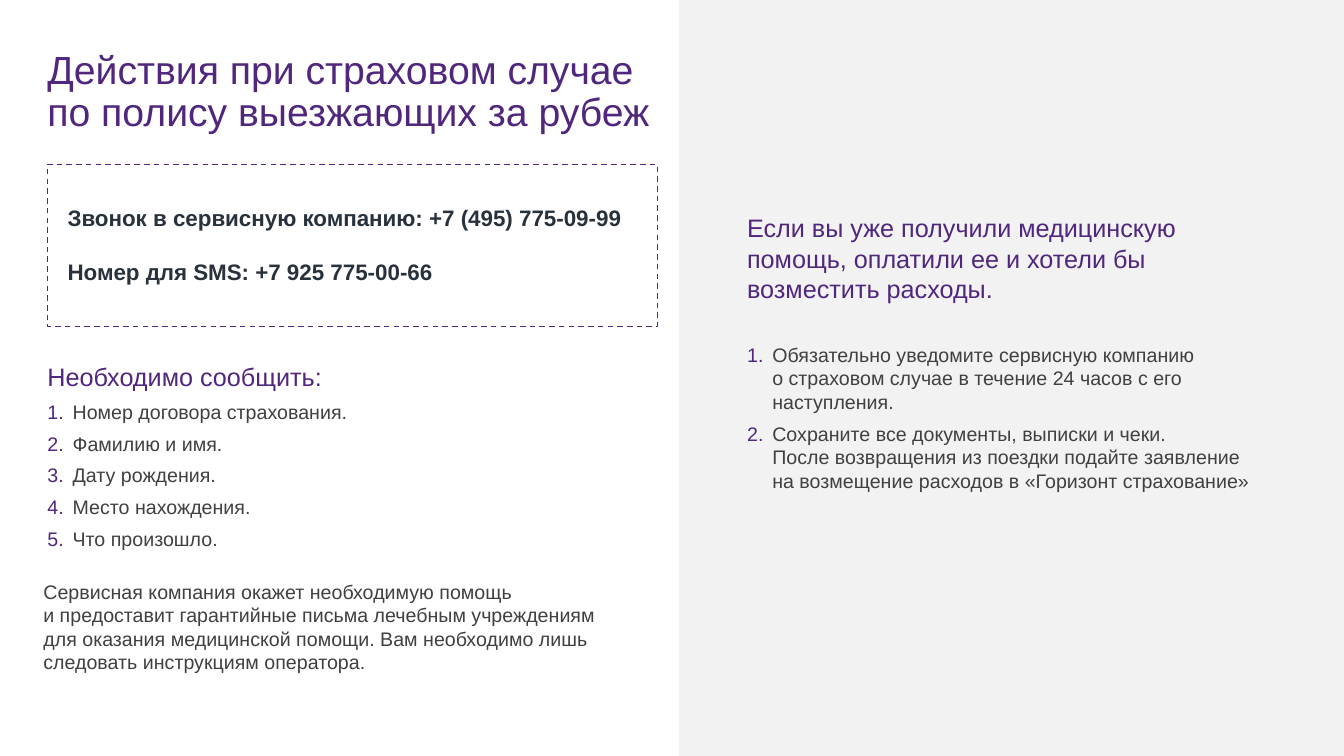
from lxml.etree import SubElement
from pptx import Presentation
from pptx.dml.color import RGBColor
from pptx.enum.dml import MSO_LINE
from pptx.enum.shapes import MSO_SHAPE
from pptx.enum.text import MSO_AUTO_SIZE
from pptx.oxml.ns import qn
from pptx.util import Inches, Pt

COLORS = {
    "purple": "50277D",
    "body": "404040",
    "dark": "28323C",
    "panel": "F2F2F2",
    "white": "FFFFFF",
}


def color(name):
    """Return a palette colour."""
    return RGBColor.from_string(COLORS[name])


def add_rectangle(slide, left, top, width, height, fill, dashed=False):
    """Add a filled rectangle, with a dashed purple border if asked."""
    shape = slide.shapes.add_shape(
        MSO_SHAPE.RECTANGLE, Inches(left), Inches(top), Inches(width), Inches(height)
    )
    shape.shadow.inherit = False
    shape.fill.solid()
    shape.fill.fore_color.rgb = color(fill)
    if dashed:
        shape.line.color.rgb = color("purple")
        shape.line.width = Pt(1)
        shape.line.dash_style = MSO_LINE.DASH
    else:
        shape.line.fill.background()


def add_text_frame(slide, left, top, width, height):
    """Add a wrapping text box without margins and return its frame."""
    box = slide.shapes.add_textbox(Inches(left), Inches(top), Inches(width), Inches(height))
    frame = box.text_frame
    frame.word_wrap = True
    frame.auto_size = MSO_AUTO_SIZE.SHAPE_TO_FIT_TEXT
    frame.margin_left = frame.margin_right = frame.margin_top = frame.margin_bottom = 0
    return frame


def style(paragraph, text, size, color_name, bold=False, after=0):
    """Fill a paragraph and set its font and space after."""
    paragraph.text = text
    paragraph.space_after = Pt(after)
    paragraph.font.name = "Arial"
    paragraph.font.size = Pt(size)
    paragraph.font.bold = bold
    paragraph.font.color.rgb = color(color_name)


def number(paragraph):
    """Give a paragraph a purple number and a hanging indent."""
    properties = paragraph._p.get_or_add_pPr()
    properties.set("marL", str(Inches(0.25)))
    properties.set("indent", str(-Inches(0.25)))
    bullet_color = SubElement(properties, qn("a:buClr"))
    SubElement(bullet_color, qn("a:srgbClr"), val=COLORS["purple"])
    SubElement(properties, qn("a:buFont"), typeface="+mj-lt")
    SubElement(properties, qn("a:buAutoNum"), type="arabicPeriod")


def add_numbered_list(slide, left, top, width, height, heading, items, heading_gap=6):
    """Add a purple heading followed by numbered items."""
    frame = add_text_frame(slide, left, top, width, height)
    style(frame.paragraphs[0], heading, 18, "purple", after=heading_gap)
    for item in items:
        paragraph = frame.add_paragraph()
        number(paragraph)
        style(paragraph, item, 14, "body", after=6)


def add_title(slide, left, top, width, height):
    """Add the slide title."""
    paragraph = add_text_frame(slide, left, top, width, height).paragraphs[0]
    paragraph.line_spacing = 0.9
    style(
        paragraph,
        "Действия при страховом случае\nпо полису выезжающих за рубеж",
        28,
        "purple",
    )


def add_contacts(slide, left, top, width, height):
    """Add the dashed frame with the phone numbers."""
    add_rectangle(slide, left, top, width, height, "white", dashed=True)
    frame = add_text_frame(slide, left + 0.2, top + 0.39, width - 0.5, height - 0.8)
    style(
        frame.paragraphs[0],
        "Звонок в сервисную компанию: +7 (495) 775-09-99",
        16,
        "dark",
        bold=True,
        after=20,
    )
    style(frame.add_paragraph(), "Номер для SMS: +7 925 775-00-66", 16, "dark", bold=True)


def add_closing_note(slide, left, top, width, height):
    """Add the note on what the service company does."""
    frame = add_text_frame(slide, left, top, width, height)
    style(
        frame.paragraphs[0],
        "Сервисная компания окажет необходимую помощь\n"
        "и предоставит гарантийные письма лечебным учреждениям "
        "для оказания медицинской помощи. Вам необходимо лишь "
        "следовать инструкциям оператора.",
        14,
        "body",
    )


def add_refund_panel(slide, left, top, width, height):
    """Add the grey panel on refunding expenses."""
    add_rectangle(slide, left, top, width, height, "panel")
    add_numbered_list(
        slide, left + 0.68, top + 2.11, width - 1.35, 2.81,
        "Если вы уже получили медицинскую помощь, оплатили ее и хотели бы возместить расходы.",
        [
            "Обязательно уведомите сервисную компанию\n"
            "о страховом случае в течение 24 часов с его наступления.",
            "Сохраните все документы, выписки и чеки.\n"
            "После возвращения из поездки подайте заявление\n"
            "на возмещение расходов в «Горизонт страхование»",
        ],
        heading_gap=28,
    )


def main():
    """Build and save the slide."""
    presentation = Presentation()
    presentation.slide_width = Inches(13.33)
    presentation.slide_height = Inches(7.5)
    slide = presentation.slides.add_slide(presentation.slide_layouts[6])
    add_refund_panel(slide, 6.73, 0, 6.6, 7.5)
    add_title(slide, 0.47, 0.5, 6.21, 0.85)
    add_contacts(slide, 0.47, 1.63, 6.05, 1.61)
    add_numbered_list(
        slide, 0.47, 3.58, 3.18, 1.9,
        "Необходимо сообщить:",
        [
            "Номер договора страхования.",
            "Фамилию и имя.",
            "Дату рождения.",
            "Место нахождения.",
            "Что произошло.",
        ],
    )
    add_closing_note(slide, 0.43, 5.75, 5.51, 1.35)
    presentation.save("out.pptx")


if __name__ == "__main__":
    main()
